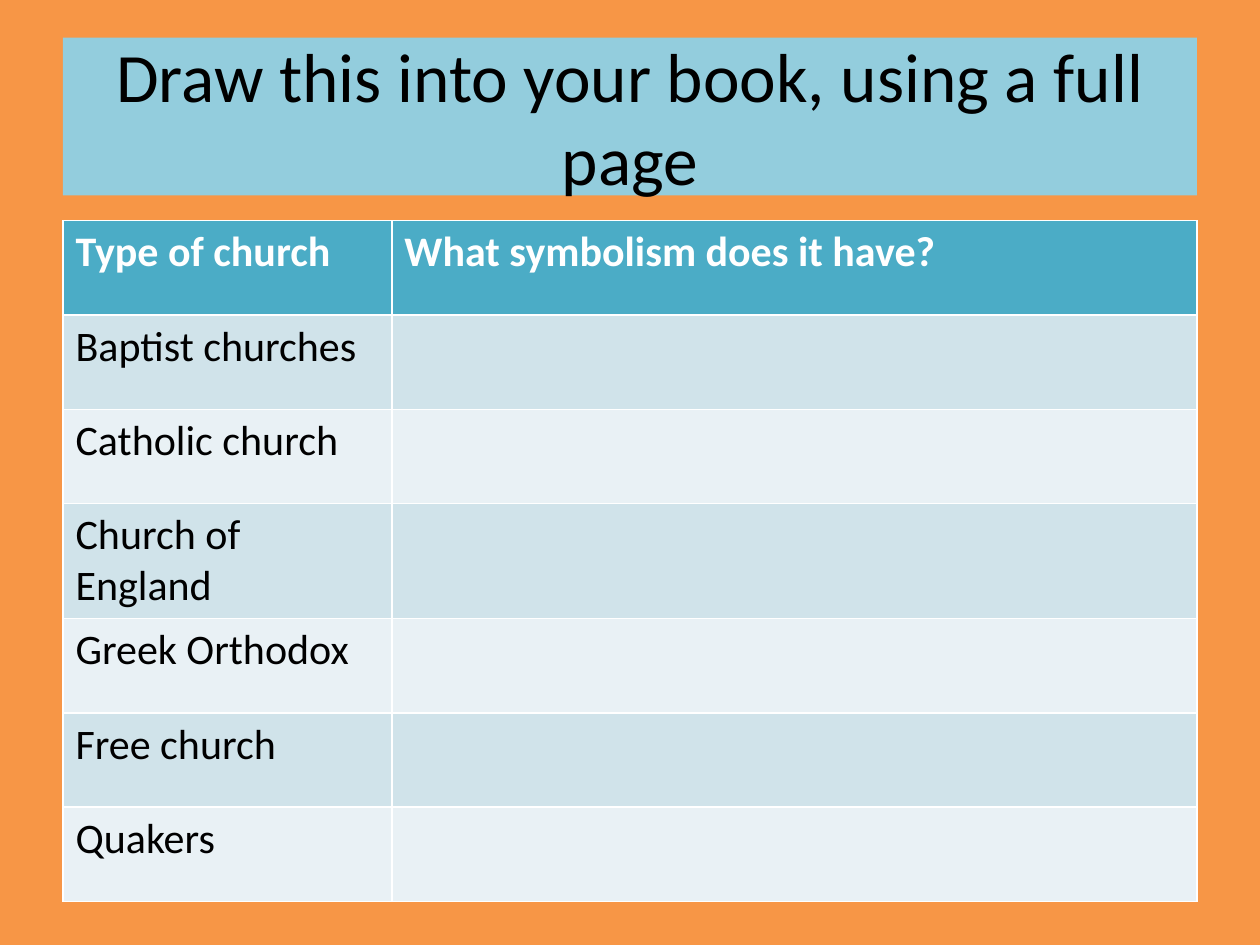
from dataclasses import dataclass

from pptx import Presentation
from pptx.dml.color import RGBColor as Rgb
from pptx.enum.shapes import MSO_SHAPE as Shape
from pptx.enum.text import MSO_ANCHOR as Anchor, PP_ALIGN as Align
from pptx.util import Cm, Pt


@dataclass(frozen=True)
class Theme:
    font: str = "Calibri"
    background: str = "F79646"
    banner: str = "93CDDD"
    header: str = "4BACC6"
    bands: tuple = ("D0E3EA", "E9F1F5")
    dark: str = "000000"
    light: str = "FFFFFF"
    title_size: float = 39.6
    table_size: float = 24


class SlideBuilder:
    def __init__(self, page, theme):
        self.page = page
        self.theme = theme

    def paint(self, fill, color):
        fill.solid()
        fill.fore_color.rgb = Rgb.from_string(color)

    def style(self, para, size, color, bold=False):
        para.font.name = self.theme.font
        para.font.size = Pt(size)
        para.font.bold = bold
        para.font.color.rgb = Rgb.from_string(color)

    def background(self):
        self.paint(self.page.background.fill, self.theme.background)

    def banner(self, text, left, top, width, height):
        box = self.page.shapes.add_shape(
            Shape.RECTANGLE, Cm(left), Cm(top), Cm(width), Cm(height))
        box.shadow.inherit = False
        box.line.fill.background()
        self.paint(box.fill, self.theme.banner)
        frame = box.text_frame
        frame.word_wrap = True
        frame.vertical_anchor = Anchor.MIDDLE
        para = frame.paragraphs[0]
        para.text = text
        para.alignment = Align.CENTER
        self.style(para, self.theme.title_size, self.theme.dark)

    def table(self, rows, left, top, widths, row_height):
        # The default table style supplies the white cell borders
        grid = self.page.shapes.add_table(
            len(rows), len(widths), Cm(left), Cm(top),
            Cm(sum(widths)), Cm(row_height * len(rows))).table
        for column, width in zip(grid.columns, widths):
            column.width = Cm(width)
        for r, row in enumerate(rows):
            is_header = r == 0
            fill = self.theme.header if is_header else self.theme.bands[(r - 1) % 2]
            color = self.theme.light if is_header else self.theme.dark
            for c, text in enumerate(row):
                cell = grid.cell(r, c)
                self.paint(cell.fill, fill)
                para = cell.text_frame.paragraphs[0]
                para.text = text
                self.style(para, self.theme.table_size, color, is_header)


def main():
    deck = Presentation()
    deck.slide_width, deck.slide_height = Cm(25.4), Cm(19.05)
    builder = SlideBuilder(deck.slides.add_slide(deck.slide_layouts[6]), Theme())
    builder.background()

    # Instruction at the top
    builder.banner("Draw this into your book, using a full page",
                   1.27, 0.76, 22.86, 3.18)

    # Table with an empty column to fill in
    churches = ["Baptist churches", "Catholic church", "Church of England",
                "Greek Orthodox", "Free church", "Quakers"]
    rows = [("Type of church", "What symbolism does it have?")]
    rows += [(church, "") for church in churches]
    builder.table(rows, 1.27, 4.45, (6.63, 16.23), 1.9)

    deck.save("out.pptx")


if __name__ == "__main__":
    main()
